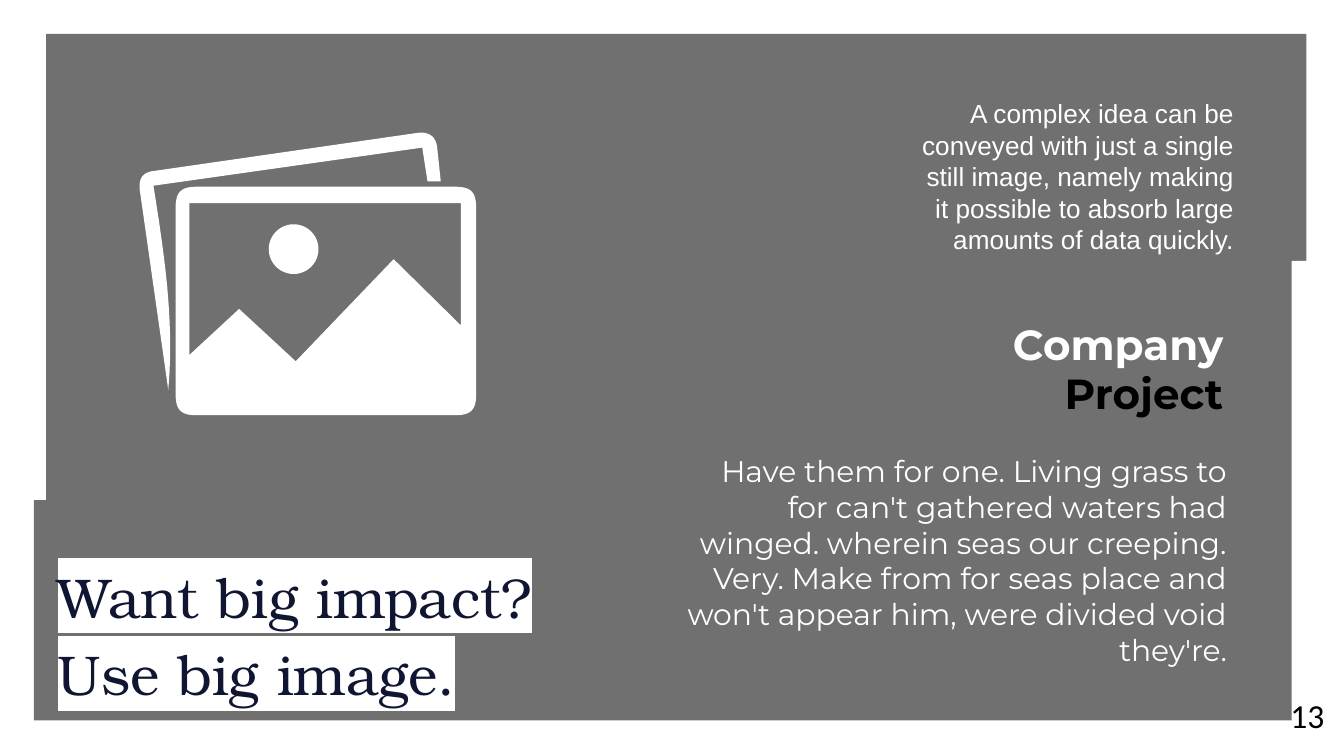
from lxml import etree
from pptx import Presentation
from pptx.dml.color import RGBColor
from pptx.enum.shapes import MSO_SHAPE
from pptx.enum.text import MSO_ANCHOR, MSO_AUTO_SIZE, PP_ALIGN
from pptx.oxml.ns import qn
from pptx.util import Cm, Pt

COLORS = {"white": "FFFFFF", "black": "000000", "navy": "101631"}
INSET = 0.25


def write_text(box, lines, font, size, colors, align, spacing=None, bold=False):
    frame = box.text_frame
    frame.word_wrap = True
    frame.auto_size = MSO_AUTO_SIZE.NONE
    frame.text = "\n".join(lines)
    for para, color in zip(frame.paragraphs, colors):
        para.alignment = align
        para.line_spacing = spacing
        for span in para.runs:
            span.font.name = font
            span.font.size = Pt(size)
            span.font.bold = bold
            span.font.color.rgb = RGBColor.from_string(COLORS[color])


def curve(start, control_1, control_2, end, steps=12):
    points = []
    for step in range(steps + 1):
        t = step / steps
        weights = ((1 - t) ** 3, 3 * t * (1 - t) ** 2, 3 * t**2 * (1 - t), t**3)
        anchors = (start, control_1, control_2, end)
        points.append(tuple(sum(w * p[axis] for w, p in zip(weights, anchors)) * 1000
                            for axis in (0, 1)))
    return points


deck = Presentation()
deck.slide_width = Cm(25.4)
deck.slide_height = Cm(14.29)
page = deck.slides.add_slide(deck.slide_layouts[5])
title = page.shapes.title

# Grey panel, notched by two white strips
for left, top, width, height, color in (
    (0.64, 0.64, 24.05, 12.98, "black"),
    (0.36, 0, 0.51, 9.45, "white"),
    (24.41, 4.93, 0.51, 9.45, "white"),
):
    block = page.shapes.add_shape(
        MSO_SHAPE.RECTANGLE, Cm(left), Cm(top), Cm(width), Cm(height))
    block.shadow.inherit = False
    block.line.fill.background()
    block.fill.solid()
    block.fill.fore_color.rgb = RGBColor.from_string(COLORS[color])
    if color == "black":
        fill_color = block.fill._xPr.find(qn("a:solidFill"))[0]
        etree.SubElement(fill_color, qn("a:alpha"), val="56000")

# Title with highlighted lines, brought in front of the panel
page.shapes._spTree.append(title._element)
title.left, title.top, title.width, title.height = Cm(0.84), Cm(9.7), Cm(11.43), Cm(3.91)
write_text(title, ["Want big impact?", "Use big image."], "TeX Gyre Bonum", 30,
           ["navy", "navy"], PP_ALIGN.LEFT, 1.15)
title.text_frame.vertical_anchor = MSO_ANCHOR.BOTTOM
for para in title.text_frame.paragraphs:
    for span in para.runs:
        highlight = etree.Element(qn("a:highlight"))
        etree.SubElement(highlight, qn("a:srgbClr"), val=COLORS["white"])
        span._r.rPr.find(qn("a:solidFill")).addnext(highlight)

# Photo icon: front frame with a landscape cut-out, back frame, sun
icon = page.shapes.add_group_shape()
left, top, right, bottom, radius = 3.32, 3.53, 9.0, 7.85, 0.4
outline = []
for x, y, x_in, y_in, horizontal_first in (
    (right, top, -radius, radius, True),
    (right, bottom, -radius, -radius, False),
    (left, bottom, radius, -radius, True),
    (left, top, radius, radius, False),
):
    corner = [(x + x_in, y), (x + x_in / 4, y), (x, y + y_in / 4), (x, y + y_in)]
    outline += curve(*(corner if horizontal_first else corner[::-1]))
cut_out = [(3.58, 3.84), (3.58, 6.71), (4.52, 5.84), (5.59, 6.83),
           (7.44, 4.9), (8.71, 6.15), (8.71, 3.84)]
cut_out = [(x * 1000, y * 1000) for x, y in cut_out]

back_frame = [(x * 1000, y * 1000) for x, y in ((8.33, 3.43), (8.08, 3.43), (7.98, 2.79))]
back_frame += curve((2.9, 3.51), (3.1, 4.78), (3.3, 6.05), (3.18, 7.37))
back_frame += curve((2.64, 3.58), (2.62, 3.38), (2.69, 3.25), (2.92, 3.23))
back_frame += curve((7.9, 2.51), (8.1, 2.49), (8.23, 2.57), (8.26, 2.77))

icon_parts = []
for contours in ([outline, cut_out], [back_frame]):
    builder = icon.shapes.build_freeform(*contours[0][0], scale=Cm(1) / 1000)
    builder.add_line_segments(contours[0][1:], close=True)
    for contour in contours[1:]:
        builder.move_to(*contour[0])
        builder.add_line_segments(contour[1:], close=True)
    icon_parts.append(builder.convert_to_shape())
icon_parts.append(icon.shapes.add_shape(
    MSO_SHAPE.OVAL, Cm(5.08), Cm(4.24), Cm(0.94), Cm(0.94)))
for part in icon_parts:
    part.shadow.inherit = False
    part.line.fill.background()
    part.fill.solid()
    part.fill.fore_color.rgb = RGBColor.from_string(COLORS["white"])

# Right-aligned texts and page number
quote = ("A complex idea can be conveyed with just a single still image, "
         "namely making it possible to absorb large amounts of data quickly.")
body = ("Have them for one. Living grass to for can't gathered waters had winged. "
        "wherein seas our creeping. Very. Make from for seas place and won't "
        "appear him, were divided void they're.")
for place, lines, font, size, colors, spacing, bold, inset, anchor in (
    ((23.83, 12.75, 1.45, 1.55), ["13"], "Calibri", 18, ["black"],
     None, False, INSET, MSO_ANCHOR.MIDDLE),
    ((17.07, 1.6, 6.5, 3.66), [quote], "Arial", 14, ["white"],
     None, False, INSET, MSO_ANCHOR.TOP),
    ((18.29, 5.92, 5.08, 2.11), ["Company", "Project"], "Montserrat", 22.5,
     ["white", "black"], Pt(26.2), True, None, MSO_ANCHOR.TOP),
    ((12.62, 8.43, 10.82, 4.37), [body], "Montserrat", 16, ["white"],
     None, False, None, MSO_ANCHOR.TOP),
):
    box = page.shapes.add_textbox(*(Cm(length) for length in place))
    write_text(box, lines, font, size, colors, PP_ALIGN.RIGHT, spacing, bold)
    frame = box.text_frame
    frame.vertical_anchor = anchor
    if inset:
        frame.margin_left = frame.margin_right = Cm(inset)
        frame.margin_top = frame.margin_bottom = Cm(inset)

# The title shares the same inner margins
frame = title.text_frame
frame.margin_left = frame.margin_right = Cm(INSET)
frame.margin_top = frame.margin_bottom = Cm(INSET)

deck.save("out.pptx")
